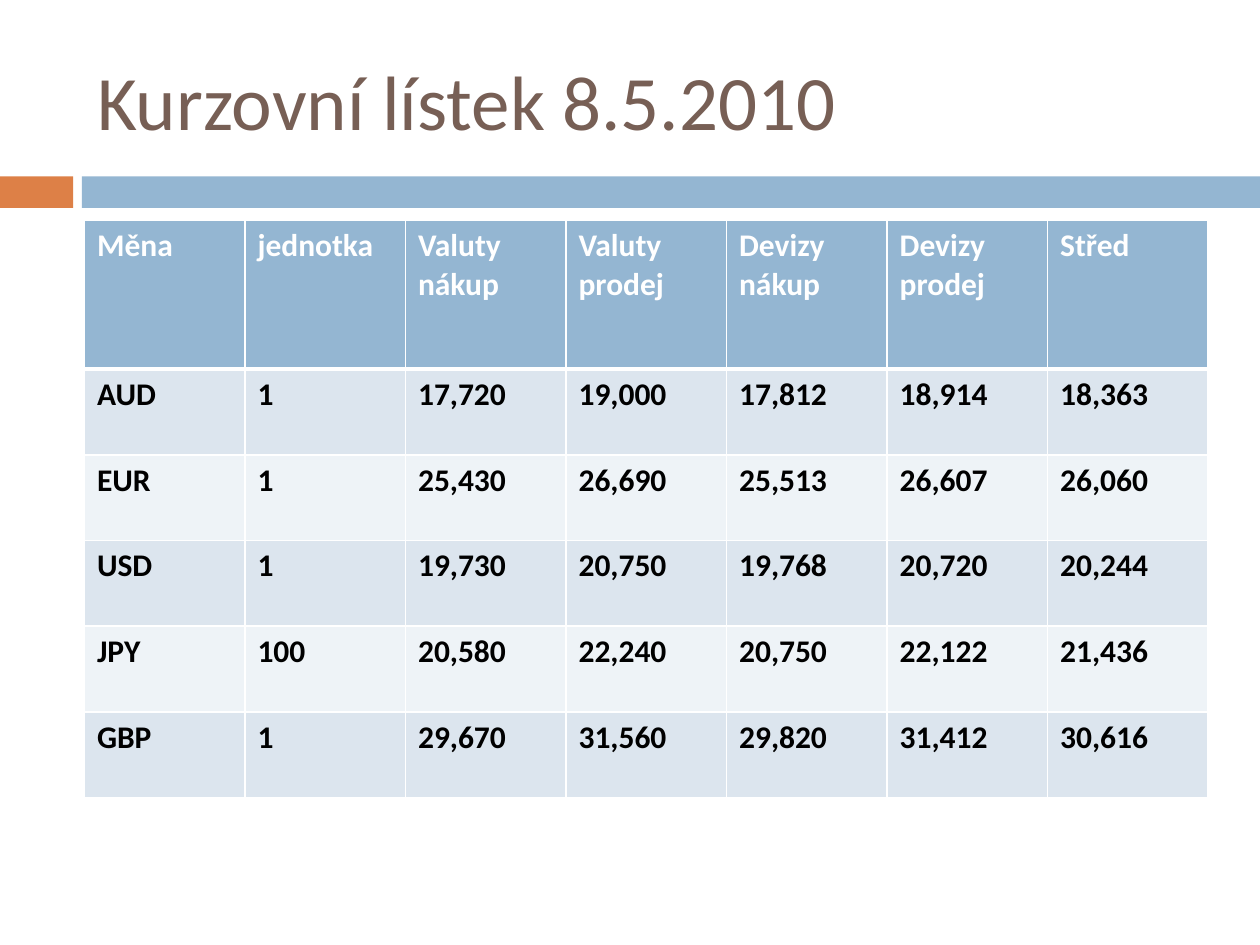
from dataclasses import dataclass

from lxml import etree
from pptx import Presentation, util as u
from pptx.dml.color import RGBColor
from pptx.enum import shapes, text
from pptx.oxml.ns import qn

TITLE = "Kurzovní lístek 8.5.2010"
HEADINGS = ["Měna", "jednotka", "Valuty nákup", "Valuty prodej",
            "Devizy nákup", "Devizy prodej", "Střed"]
RATES = [
    ["AUD", "1", "17,720", "19,000", "17,812", "18,914", "18,363"],
    ["EUR", "1", "25,430", "26,690", "25,513", "26,607", "26,060"],
    ["USD", "1", "19,730", "20,750", "19,768", "20,720", "20,244"],
    ["JPY", "100", "20,580", "22,240", "20,750", "22,122", "21,436"],
    ["GBP", "1", "29,670", "31,560", "29,820", "31,412", "30,616"],
]


@dataclass(frozen=True)
class Theme:
    font: str = "Calibri"
    title_size: int = 44
    table_size: int = 18
    title: str = "775F55"
    accent: str = "DD8047"
    main: str = "94B6D2"
    bands: tuple = ("DCE5EE", "EEF3F7")
    light: str = "FFFFFF"
    dark: str = "000000"
    thin: int = 1
    thick: int = 3


THEME = Theme()
WIDTH, HEIGHT = 10, 7.5
LEFT, CONTENT_WIDTH = 0.67, 8.92
STRIPE_TOP, STRIPE_HEIGHT = 1.4, 0.25
STRIPES = [(0, 0.58, THEME.accent), (0.65, WIDTH - 0.65, THEME.main)]
TABLE_TOP, HEADING_HEIGHT, RATE_HEIGHT = 1.75, 1.18, 0.68


def inches(*lengths):
    return [u.Inches(length) for length in lengths]


def format_text(frame, size, color, bold=False):
    for paragraph in frame.paragraphs:
        paragraph.alignment = text.PP_ALIGN.LEFT
        for run in paragraph.runs:
            run.font.name, run.font.size = THEME.font, u.Pt(size)
            run.font.bold = bold
            run.font.color.rgb = RGBColor.from_string(color)


def paint(fill, color):
    fill.solid()
    fill.fore_color.rgb = RGBColor.from_string(color)


def set_borders(cell, widths):
    """Draw left, right, top and bottom lines, which precede the cell's fill."""
    properties = cell._tc.get_or_add_tcPr()
    for position, (side, width) in enumerate(zip("LRTB", widths)):
        line = etree.Element(qn(f"a:ln{side}"), w=str(u.Pt(width)))
        solid = etree.SubElement(line, qn("a:solidFill"))
        etree.SubElement(solid, qn("a:srgbClr"), val=THEME.light)
        properties.insert(position, line)


def add_stripes(slide):
    for left, width, color in STRIPES:
        stripe = slide.shapes.add_shape(
            shapes.MSO_SHAPE.RECTANGLE,
            *inches(left, STRIPE_TOP, width, STRIPE_HEIGHT))
        stripe.shadow.inherit = False
        paint(stripe.fill, color)
        stripe.line.fill.background()


def add_title(slide):
    title = slide.shapes.title
    title.left, title.top, title.width, title.height = inches(
        LEFT, 0.25, CONTENT_WIDTH, 1.08)
    title.text_frame.text = TITLE
    title.text_frame.vertical_anchor = text.MSO_ANCHOR.MIDDLE
    format_text(title.text_frame, THEME.title_size, THEME.title)


def add_rates(slide):
    rows = [HEADINGS, *RATES]
    heights = [HEADING_HEIGHT] + [RATE_HEIGHT] * len(RATES)
    table = slide.shapes.add_table(
        len(rows), len(HEADINGS),
        *inches(LEFT, TABLE_TOP, CONTENT_WIDTH, sum(heights))).table
    for r, (values, height) in enumerate(zip(rows, heights)):
        heading = r == 0
        table.rows[r].height = u.Inches(height)
        fill = THEME.main if heading else THEME.bands[(r - 1) % 2]
        top = THEME.thick if r == 1 else THEME.thin
        bottom = THEME.thick if heading else THEME.thin
        for cell, value in zip(table.rows[r].cells, values):
            cell.text_frame.text = value
            format_text(cell.text_frame, THEME.table_size,
                        THEME.light if heading else THEME.dark, bold=True)
            paint(cell.fill, fill)
            set_borders(cell, (THEME.thin, THEME.thin, top, bottom))


def main():
    deck = Presentation()
    deck.slide_width, deck.slide_height = inches(WIDTH, HEIGHT)
    slide = deck.slides.add_slide(deck.slide_layouts.get_by_name("Title Only"))
    add_stripes(slide)
    add_title(slide)
    add_rates(slide)
    deck.save("out.pptx")


if __name__ == "__main__":
    main()
